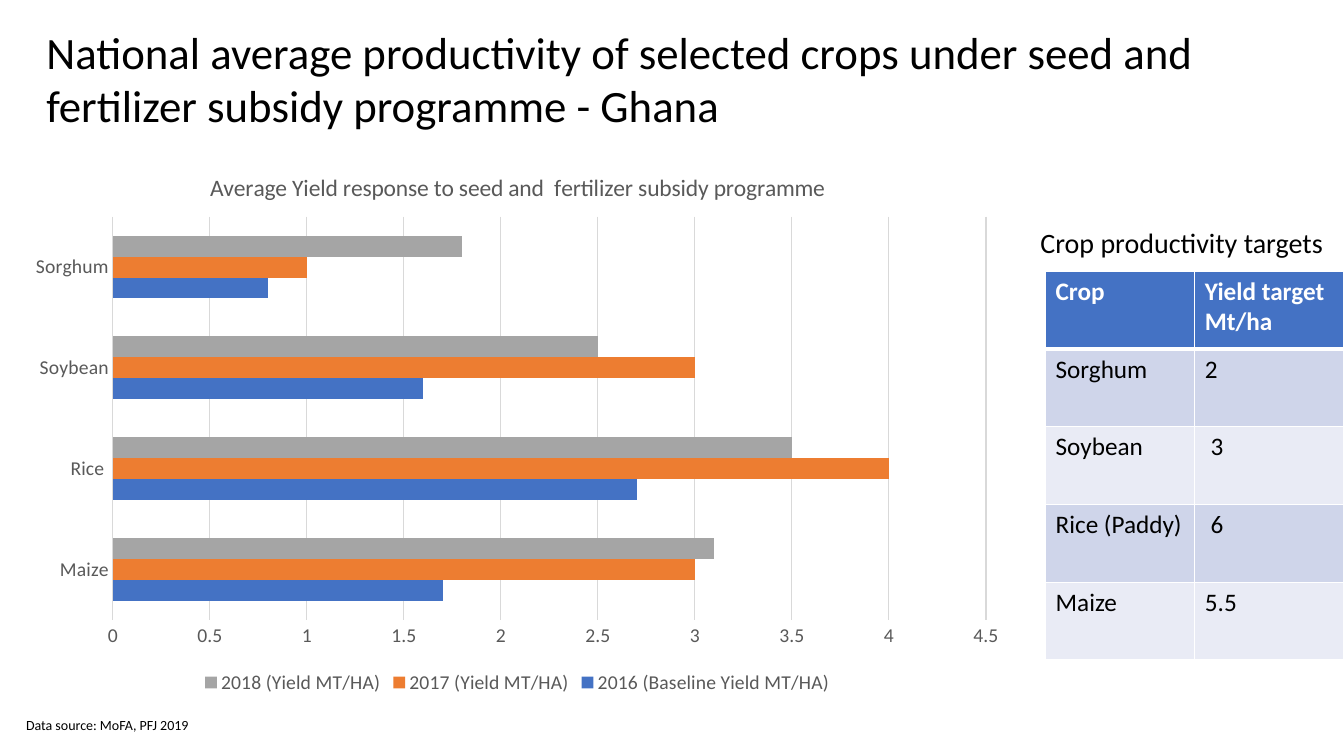
from lxml.etree import SubElement
from pptx import Presentation
from pptx.chart.data import CategoryChartData
from pptx.dml.color import RGBColor
from pptx.enum.chart import XL_CHART_TYPE, XL_LEGEND_POSITION, XL_TICK_MARK
from pptx.enum.text import MSO_ANCHOR, PP_ALIGN
from pptx.oxml import parse_xml
from pptx.oxml.ns import nsdecls, qn
from pptx.util import Inches, Pt

FONT = "Calibri"
GREY, RULE = "595959", "D9D9D9"
CROPS = ["Maize", "Rice ", "Soybean", "Sorghum"]
YIELDS = [
    ("2016 (Baseline Yield MT/HA)", [1.7, 2.7, 1.6, 0.8], "4472C4"),
    ("2017 (Yield MT/HA)", [3, 4, 3, 1], "ED7D31"),
    ("2018 (Yield MT/HA)", [3.1, 3.5, 2.5, 1.8], "A5A5A5"),
]
TARGETS = [
    ("Crop", "Yield target Mt/ha"),
    ("Sorghum", "2"),
    ("Soybean", " 3"),
    ("Rice (Paddy)", " 6"),
    ("Maize", "5.5"),
]


def color(code):
    return RGBColor.from_string(code)


def style(font, size, code, bold=False):
    font.name, font.size, font.bold = FONT, Pt(size), bold
    font.color.rgb = color(code)


def write(frame, text, size=18, code="000000", bold=False):
    frame.word_wrap = True
    para = frame.paragraphs[0]
    para.alignment = PP_ALIGN.LEFT
    run = para.add_run()
    run.text = text
    style(run.font, size, code, bold)


def place(shape, box):
    shape.left, shape.top, shape.width, shape.height = map(Inches, box)


def add_title(slide, box, text):
    title = slide.shapes.title
    place(title, box)
    title.text_frame.vertical_anchor = MSO_ANCHOR.TOP
    write(title.text_frame, text, size=32)


def add_label(slide, box, text, size):
    label = slide.shapes.add_textbox(*map(Inches, box))
    write(label.text_frame, text, size=size)


def set_plot(chart, x, y, w, h):
    """Fix the inner plot area, in fractions of the chart."""
    area = chart.element.find(".//" + qn("c:plotArea"))
    for old in area.findall(qn("c:layout")):
        area.remove(old)
    layout = parse_xml(f"<c:layout {nsdecls('c')}><c:manualLayout/></c:layout>")
    parts = [("layoutTarget", "inner"), ("xMode", "edge"), ("yMode", "edge"),
             ("x", x), ("y", y), ("w", w), ("h", h)]
    for tag, val in parts:
        SubElement(layout[0], qn("c:" + tag)).set("val", str(val))
    area.insert(0, layout)


def add_yields(slide, box):
    data = CategoryChartData()
    data.categories = CROPS
    for name, vals, _ in YIELDS:
        data.add_series(name, vals)
    chart = slide.shapes.add_chart(
        XL_CHART_TYPE.BAR_CLUSTERED, *map(Inches, box), data).chart
    style(chart.font, 14, GREY)

    chart.has_title = True
    write(chart.chart_title.text_frame,
          "Average Yield response to seed and  fertilizer subsidy programme",
          size=16.8, code=GREY)
    chart.chart_title.include_in_layout = False
    chart.has_legend = True
    chart.legend.position = XL_LEGEND_POSITION.BOTTOM
    chart.legend.include_in_layout = False
    style(chart.legend.font, 14, GREY)

    plot = chart.plots[0]
    plot.gap_width, plot.overlap = 182, 0
    plot.vary_by_categories = False
    for series, (_, _, code) in zip(plot.series, YIELDS):
        series.format.fill.solid()
        series.format.fill.fore_color.rgb = color(code)

    crops, scale = chart.category_axis, chart.value_axis
    for axis in (crops, scale):
        axis.major_tick_mark = axis.minor_tick_mark = XL_TICK_MARK.NONE
        style(axis.tick_labels.font, 14, GREY)
    scale.minimum_scale, scale.maximum_scale, scale.major_unit = 0, 4.5, 0.5
    scale.has_major_gridlines = True
    scale.format.line.fill.background()
    for line in (crops.format.line, scale.major_gridlines.format.line):
        line.color.rgb = color(RULE)
        line.width = Pt(0.75)
    wide, high = box[2:]
    set_plot(chart, 0.96 / wide, 0.65 / high, 8.66 / wide, 4 / high)


def add_edges(cell, base):
    """Draw white borders, with the given width in points at the bottom."""
    props = cell._tc.get_or_add_tcPr()
    for i, (side, width) in enumerate(zip("LRTB", (1, 1, 1, base))):
        props.insert(i, parse_xml(
            f'<a:ln{side} {nsdecls("a")} w="{Pt(width)}"><a:solidFill>'
            f'<a:srgbClr val="FFFFFF"/></a:solidFill></a:ln{side}>'))


def add_targets(slide, box):
    rows, cols = len(TARGETS), len(TARGETS[0])
    table = slide.shapes.add_table(rows, cols, *map(Inches, box)).table
    for r, row in enumerate(TARGETS):
        head = r == 0
        fill = "4472C4" if head else ("E9EBF5", "CFD5EA")[r % 2]
        for c, text in enumerate(row):
            cell = table.cell(r, c)
            write(cell.text_frame, text, bold=head,
                  code="FFFFFF" if head else "000000")
            cell.fill.solid()
            cell.fill.fore_color.rgb = color(fill)
            add_edges(cell, 3 if head else 1)


def main():
    deck = Presentation()
    deck.slide_width, deck.slide_height = Inches(13.33), Inches(7.5)
    slide = deck.slides.add_slide(deck.slide_layouts[5])
    add_title(slide, (0.36, 0.19, 12.3, 1.18),
              "National average productivity of selected crops under seed and "
              "fertilizer subsidy programme - Ghana")
    add_yields(slide, (0.16, 1.5, 9.94, 5.43))
    add_label(slide, (0.16, 7.06, 1.94, 0.27), "Data source: MoFA, PFJ 2019", 10)
    add_targets(slide, (10.37, 2.69, 2.96, 3.86))
    add_label(slide, (10.22, 2.19, 3.11, 0.44), "Crop productivity targets", 20)
    deck.save("out.pptx")


if __name__ == "__main__":
    main()
